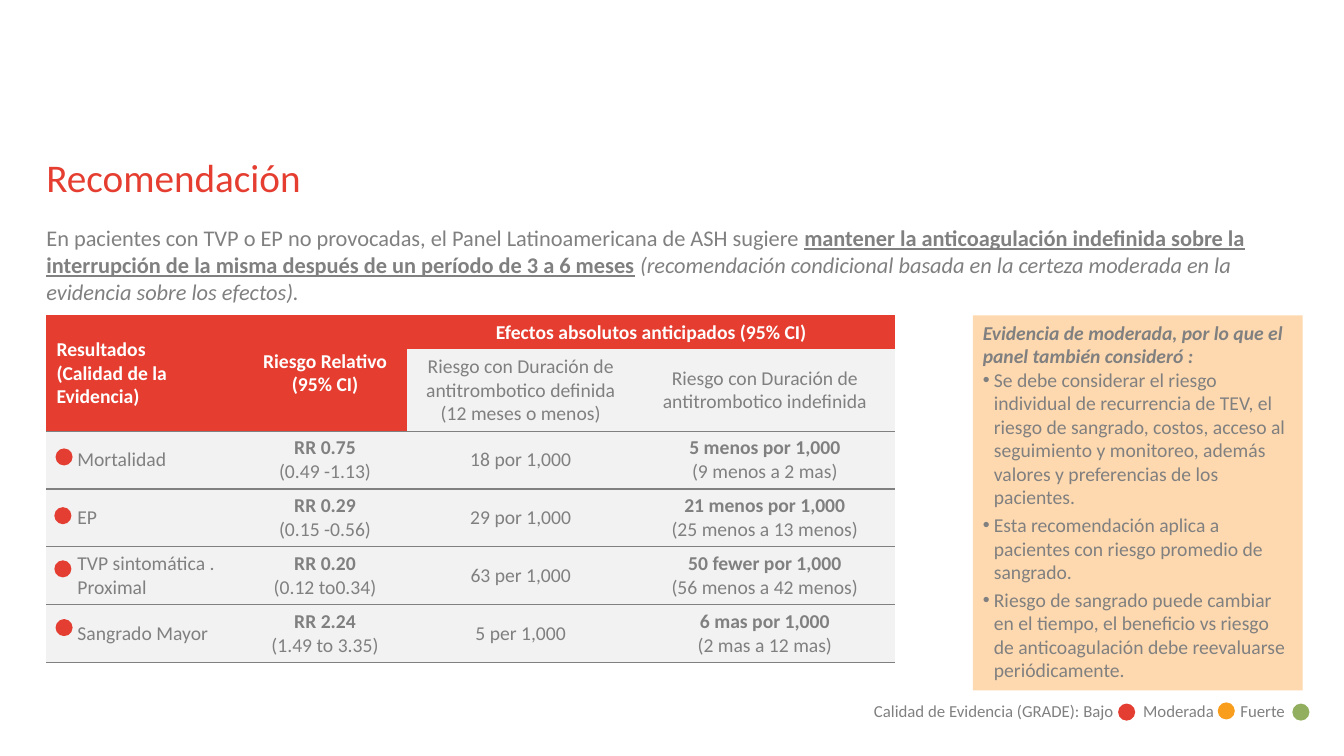
from lxml import etree
from pptx import Presentation
from pptx import util as u
from pptx.dml.color import RGBColor
from pptx.enum import shapes, text
from pptx.oxml.ns import qn

RED, DOT_RED, ORANGE, GREEN = "E53E31", "E43E32", "F99D1C", "91AF5F"
GREY, PALE, PEACH, WHITE = "808080", "F2F2F2", "FED9B0", "FFFFFF"
LEFT, CONTENT_TOP, DOT_SIZE = 1.17, 7.95, 0.43

TITLE = "Recomendación"
RECOMMENDATION = [
    ("En pacientes con TVP o EP no provocadas, el Panel Latinoamericana de ASH sugiere ", {}),
    ("mantener la anticoagulación indefinida sobre la interrupción de la misma "
     "después de un período de 3 a 6 meses", {"bold": True, "underline": True}),
    (" (recomendación condicional basada en la certeza moderada en la evidencia "
     "sobre los efectos).", {"italic": True}),
]
# first row, first column, last row, last column, lines
RED_HEADERS = [
    (0, 0, 1, 0, ["Resultados", "(Calidad de la Evidencia)"]),
    (0, 1, 1, 1, ["Riesgo Relativo", "(95% CI)"]),
    (0, 2, 0, 3, ["Efectos absolutos anticipados (95% CI)"]),
]
DURATIONS = [
    "Riesgo con Duración de antitrombotico definida (12 meses o menos)",
    "Riesgo con Duración de antitrombotico indefinida",
]
OUTCOMES = [
    (["Mortalidad"], ["RR 0.75", "(0.49 -1.13)"], ["18 por 1,000"],
     ["5 menos por 1,000", "(9 menos a 2 mas)"]),
    (["EP"], ["RR 0.29", "(0.15 -0.56)"], ["29 por 1,000"],
     ["21 menos por 1,000", "(25 menos a 13 menos)"]),
    (["TVP sintomática .", "Proximal"], ["RR 0.20", "(0.12 to0.34)"], ["63 per 1,000"],
     ["50 fewer por 1,000", "(56 menos a 42 menos)"]),
    (["Sangrado Mayor"], ["RR 2.24", "(1.49 to 3.35)"], ["5 per 1,000"],
     ["6 mas por 1,000", "(2 mas a 12 mas)"]),
]
COLUMN_WIDTHS = [4.95, 4.14, 5.72, 6.58]
ROW_HEIGHTS = [0.84, 2.04] + [1.45] * len(OUTCOMES)
PANEL_HEADING = "Evidencia de moderada, por lo que el panel también consideró :"
CONSIDERATIONS = [
    "Se debe considerar el riesgo individual de recurrencia de TEV, el riesgo de sangrado, "
    "costos, acceso al seguimiento y monitoreo, además valores y preferencias de los pacientes.",
    "Esta recomendación aplica a pacientes con riesgo promedio de sangrado.",
    "Riesgo de sangrado puede cambiar en el tiempo, el beneficio vs riesgo de anticoagulación "
    "debe reevaluarse periódicamente.",
]
LEGEND = ["Calidad de Evidencia (GRADE): Bajo", "Moderada", "Fuerte"]
LEGEND_TABS = [6.78, 9.23]
# left, top, colour
DOTS = [
    (1.4, 11.3, DOT_RED), (1.37, 12.78, DOT_RED),
    (1.37, 14.12, DOT_RED), (1.4, 15.6, DOT_RED),
    (28.17, 17.73, DOT_RED), (30.68, 17.7, ORANGE), (32.56, 17.73, GREEN),
]


def rgb(value):
    return RGBColor.from_string(value)


def add_run(paragraph, words, size, color=GREY, **formats):
    run = paragraph.add_run()
    run.text = words
    run.font.color.rgb = rgb(color)
    for name, value in {"name": "Calibri", "size": u.Pt(size), **formats}.items():
        setattr(run.font, name, value)


def add_box(box, insets=(0.25, 0.13, 0.25, 0.13)):
    frame = slide.shapes.add_textbox(*map(u.Cm, box)).text_frame
    frame.word_wrap = True
    for side, inset in zip(("left", "top", "right", "bottom"), insets):
        setattr(frame, f"margin_{side}", u.Cm(inset))
    return frame


def add_filled(kind, box, color):
    shape = slide.shapes.add_shape(kind, *map(u.Cm, box))
    shape.shadow.inherit = False
    shape.fill.solid()
    shape.fill.fore_color.rgb = rgb(color)
    shape.line.fill.background()
    return shape


def rule_cell(cell, *sides):
    """Draw a thin grey rule on the given sides of a cell."""
    for side in sides:
        line = etree.SubElement(cell._tc.get_or_add_tcPr(), qn(f"a:ln{side}"), w="12700")
        fill = etree.SubElement(line, qn("a:solidFill"))
        etree.SubElement(fill, qn("a:srgbClr"), val=GREY)


def fill_cell(cell, lines, background, color=GREY, bolds=(), centred=True):
    cell.fill.solid()
    cell.fill.fore_color.rgb = rgb(background)
    cell.vertical_anchor = text.MSO_ANCHOR.MIDDLE
    frame = cell.text_frame
    for index, line in enumerate(lines):
        paragraph = frame.add_paragraph() if index else frame.paragraphs[0]
        paragraph.alignment = text.PP_ALIGN.CENTER if centred else text.PP_ALIGN.LEFT
        add_run(paragraph, line, 14, color, bold=index in bolds)


def add_results():
    table = slide.shapes.add_table(
        len(ROW_HEIGHTS), len(COLUMN_WIDTHS), u.Cm(LEFT), u.Cm(CONTENT_TOP),
        u.Cm(sum(COLUMN_WIDTHS)), u.Cm(sum(ROW_HEIGHTS))).table
    table.first_row = table.horz_banding = False
    style = table._tbl.tblPr.find(qn("a:tableStyleId"))
    style.text = "{2D5ABB26-0587-4C30-8999-92F81FD0307C}"
    for column, width in zip(table.columns, COLUMN_WIDTHS):
        column.width = u.Cm(width)
    for row, height in zip(table.rows, ROW_HEIGHTS):
        row.height = u.Cm(height)

    for top, left, bottom, right, lines in RED_HEADERS:
        cell = table.cell(top, left)
        cell.merge(table.cell(bottom, right))
        fill_cell(cell, lines, RED, WHITE, bolds=(0, 1), centred=left > 0)
    for column, duration in enumerate(DURATIONS, 2):
        rule_cell(table.cell(1, column), "B")
        fill_cell(table.cell(1, column), [duration], PALE)
    for row, outcome in enumerate(OUTCOMES, 2):
        for column, lines in enumerate(outcome):
            cell = table.cell(row, column)
            rule_cell(cell, "T", "B")
            fill_cell(cell, lines, PALE, bolds=(0,) if column in (1, 3) else (),
                      centred=column > 0)
        table.cell(row, 0).margin_left = u.Cm(0.78)


def add_panel():
    panel = add_filled(shapes.MSO_SHAPE.RECTANGLE, (24.51, CONTENT_TOP, 8.31, 9.45), PEACH)
    frame = panel.text_frame
    frame.word_wrap = True
    frame.vertical_anchor = text.MSO_ANCHOR.TOP
    heading = frame.paragraphs[0]
    heading.alignment = text.PP_ALIGN.LEFT
    add_run(heading, PANEL_HEADING, 14, bold=True, italic=True)
    for consideration in CONSIDERATIONS:
        item = frame.add_paragraph()
        item.alignment = text.PP_ALIGN.LEFT
        item.space_after = u.Pt(3)
        properties = item._p.get_or_add_pPr()
        properties.set("marL", str(u.Cm(0.28)))
        properties.set("indent", str(-u.Cm(0.28)))
        etree.SubElement(properties, qn("a:buFont"), typeface="Arial")
        etree.SubElement(properties, qn("a:buChar"), char="•")
        add_run(item, consideration, 14)


def add_legend():
    paragraph = add_box((21.77, 17.53, 12.09, 0.76)).paragraphs[0]
    tabs = etree.SubElement(paragraph._p.get_or_add_pPr(), qn("a:tabLst"))
    for position in LEGEND_TABS:
        etree.SubElement(tabs, qn("a:tab"), pos=str(u.Cm(position)), algn="l")
    add_run(paragraph, "\t".join(LEGEND), 12)


deck = Presentation()
deck.slide_width, deck.slide_height = u.Cm(33.86), u.Cm(19.05)
slide = deck.slides.add_slide(deck.slide_layouts[6])

add_results()
add_panel()
add_legend()
for left, top, color in DOTS:
    add_filled(shapes.MSO_SHAPE.OVAL, (left, top, DOT_SIZE, DOT_SIZE), color)

title = add_box((LEFT, 3.73, 30.48, 1.98), (0, 0.13, 0.25, 0.13))
add_run(title.paragraphs[0], TITLE, 28, RED)
recommendation = add_box((LEFT, 5.66, 30.48, 2.2), (0, 0, 0, 0))
for words, formats in RECOMMENDATION:
    add_run(recommendation.paragraphs[0], words, 16, **formats)

deck.save("out.pptx")
